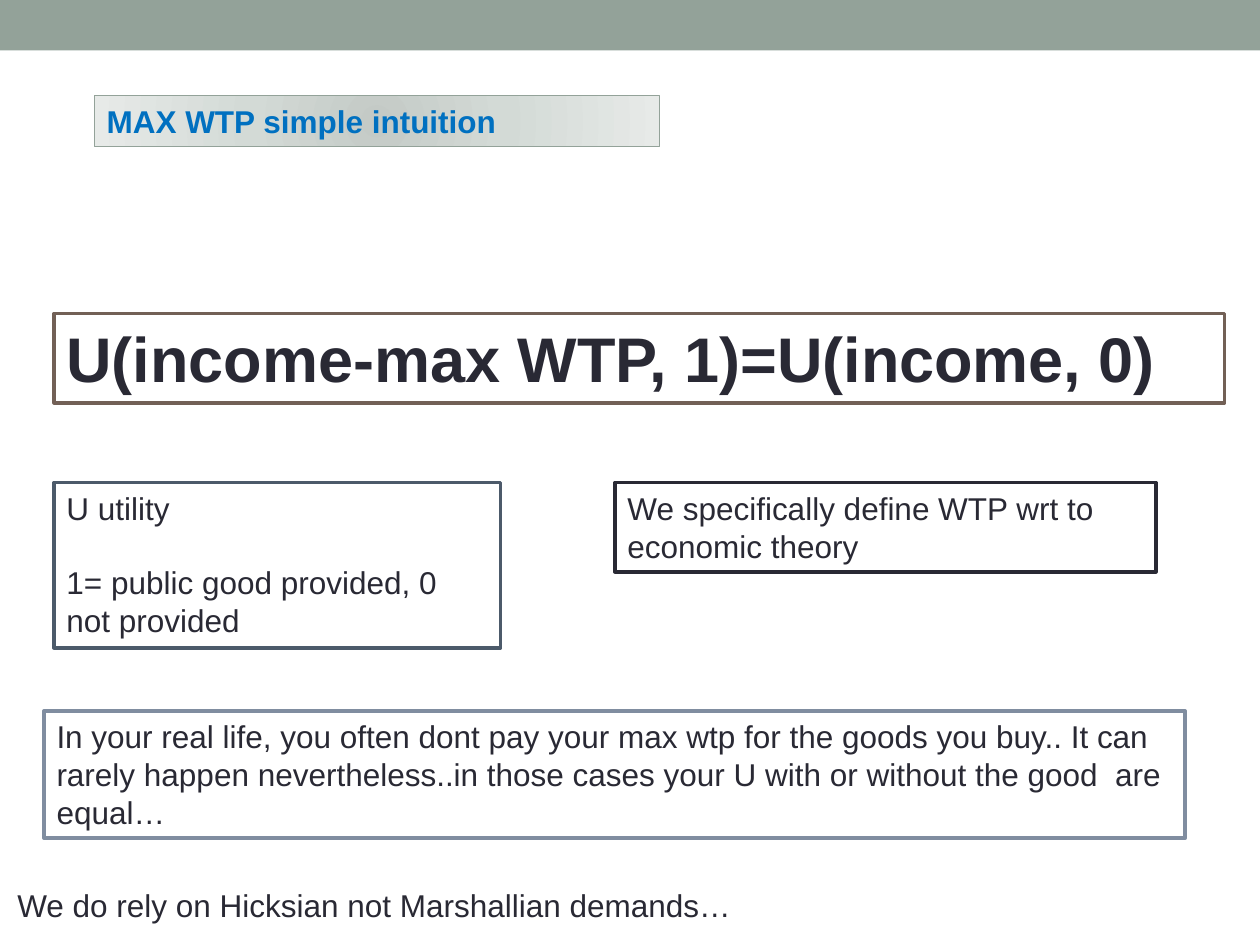
"""Build the slide on the simple intuition behind maximum willingness to pay."""
from pptx import Presentation
from pptx.dml.color import RGBColor
from pptx.enum.shapes import MSO_SHAPE
from pptx.enum.text import MSO_ANCHOR, MSO_AUTO_SIZE, PP_ALIGN
from pptx.oxml import parse_xml
from pptx.oxml.ns import nsdecls
from pptx.util import Cm, Pt

FONT = "Arial"
SAGE = RGBColor(0x93, 0xA2, 0x99)
BLUE = RGBColor(0x00, 0x70, 0xC0)
INK = RGBColor(0x29, 0x29, 0x34)
BROWN = RGBColor(0x72, 0x60, 0x56)
SLATE = RGBColor(0x4C, 0x5A, 0x6A)
STEEL = RGBColor(0x80, 0x8D, 0xA0)
WHITE = RGBColor(0xFF, 0xFF, 0xFF)
GLOW = ((0, RGBColor(0xC4, 0xCA, 0xC6)),
        (45, RGBColor(0xD3, 0xDA, 0xD6)),
        (100, RGBColor(0xE7, 0xEA, 0xE8)))


def add_rect(s, box, fill, line=None, width=2.08):
    sp = s.shapes.add_shape(MSO_SHAPE.RECTANGLE, *map(Cm, box))
    sp.shadow.inherit = False
    sp.fill.solid()
    sp.fill.fore_color.rgb = fill
    if line is None:
        sp.line.fill.background()
    else:
        sp.line.color.rgb = line
        sp.line.width = Pt(width)
    return sp


def set_glow(sp, stops):
    gs = "".join(f'<a:gs pos="{pos * 1000}"><a:srgbClr val="{color}"/></a:gs>'
                 for pos, color in stops)
    grad = parse_xml(
        f'<a:gradFill {nsdecls("a")} rotWithShape="1"><a:gsLst>{gs}</a:gsLst>'
        '<a:path path="circle"><a:fillToRect l="100000" t="100000" '
        'r="100000" b="100000"/></a:path></a:gradFill>')
    sp_pr = sp.element.spPr
    solid = sp_pr.find("{*}solidFill")
    sp_pr.replace(solid, grad)


def write(sp, *lines, size=18, color=INK, bold=False, gap=0):
    tf = sp.text_frame
    tf.word_wrap = True
    tf.auto_size = MSO_AUTO_SIZE.SHAPE_TO_FIT_TEXT
    tf.vertical_anchor = MSO_ANCHOR.TOP
    for i, text in enumerate(lines):
        p = tf.add_paragraph() if i else tf.paragraphs[0]
        p.alignment = PP_ALIGN.LEFT
        if i:
            p.space_before = Pt(gap)
        r = p.add_run()
        r.text = text
        r.font.name = FONT
        r.font.size = Pt(size)
        r.font.bold = bold
        r.font.color.rgb = color


def main():
    prs = Presentation()
    prs.slide_width, prs.slide_height = Cm(25.4), Cm(19.05)
    s = prs.slides.add_slide(prs.slide_layouts[6])

    add_rect(s, (0, 0, 25.4, 1.02), SAGE)

    title = add_rect(s, (1.9, 1.93, 11.4, 1.03), WHITE, SAGE, 0.75)
    set_glow(title, GLOW)
    write(title, "MAX WTP simple intuition", color=BLUE, bold=True)

    equation = add_rect(s, (1.09, 6.32, 23.6, 1.8), WHITE, BROWN)
    write(equation, "U(income-max WTP, 1)=U(income, 0)", size=36, bold=True)

    remark = s.shapes.add_textbox(Cm(0.1), Cm(17.73), Cm(17.2), Cm(1.03))
    write(remark, "We do rely on Hicksian not Marshallian demands…")

    legend = add_rect(s, (1.09, 9.73, 9, 3.33), WHITE, SLATE)
    write(legend, "U utility", "1= public good provided, 0 not provided", gap=20.7)

    real_life = add_rect(s, (0.89, 14.33, 23, 2.57), WHITE, STEEL)
    write(real_life, "In your real life, you often dont pay your max wtp for the "
          "goods you buy.. It can rarely happen nevertheless..in those cases "
          "your U with or without the good  are equal…")

    theory = add_rect(s, (12.4, 9.73, 10.9, 1.8), WHITE, INK)
    write(theory, "We specifically define WTP wrt to economic theory")

    prs.save("out.pptx")


if __name__ == "__main__":
    main()
